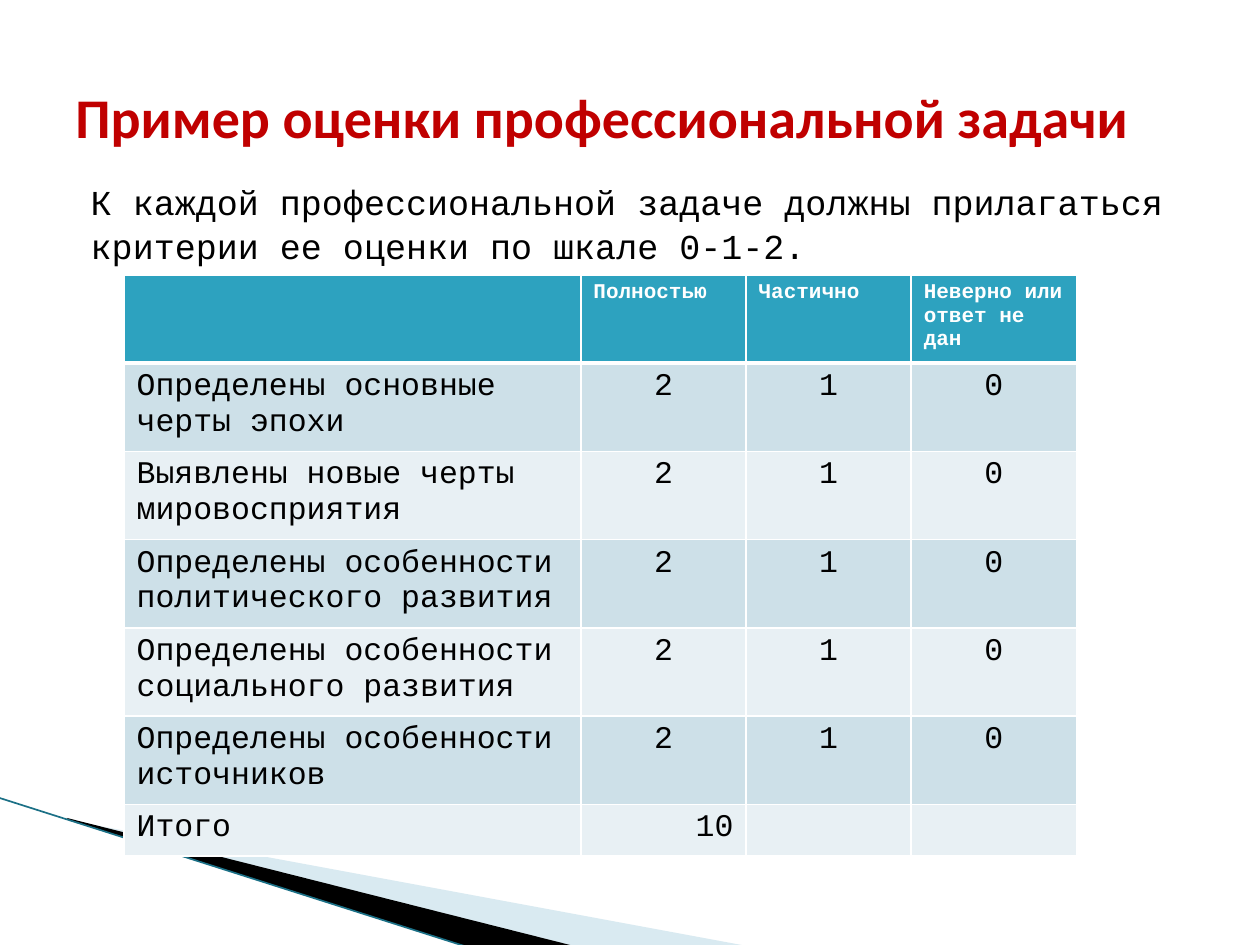
import pptx
import pptx.util
import pptx.dml.color
import pptx.enum.shapes
import pptx.enum.text
import pptx.oxml
import pptx.oxml.ns

Cm = pptx.util.Cm
Pt = pptx.util.Pt
ALIGN = pptx.enum.text.PP_ALIGN

COLORS = {
    "title": "C00000", "text": "000000", "white": "FFFFFF",
    "header": "2DA2BF", "odd": "CDE0E8", "even": "E8F0F4",
    "pale": "A0CBDC", "black": "000000", "edge": "1B7086",
}
TITLE = {"name": "Calibri", "size": Pt(32), "bold": True, "color": "title"}
BODY = {"name": "Courier New", "size": Pt(20), "bold": False, "color": "text"}
HEADER = {**BODY, "size": Pt(12), "bold": True, "color": "white"}
CELL = {**BODY, "size": Pt(18)}

HEADINGS = ["", "Полностью", "Частично", "Неверно или ответ не дан"]
CRITERIA = [
    "Определены основные черты эпохи",
    "Выявлены новые черты мировосприятия",
    "Определены особенности политического развития",
    "Определены особенности социального развития",
    "Определены особенности источников",
]
ROWS = [HEADINGS] + [[name, "2", "1", "0"] for name in CRITERIA] + [["Итого", "10", "", ""]]


def rgb(name):
    return pptx.dml.color.RGBColor.from_string(COLORS[name])


def write(para, text, style):
    span = para.add_run()
    span.text = text
    for key, value in style.items():
        if key == "color":
            span.font.color.rgb = rgb(value)
        else:
            setattr(span.font, key, value)


def add_text(page, left, top, width, height, text, style, frame_format, para_format):
    box = page.shapes.add_textbox(Cm(left), Cm(top), Cm(width), Cm(height))
    frame = box.text_frame
    for key, value in {"word_wrap": True, **frame_format}.items():
        setattr(frame, key, value)
    para = frame.paragraphs[0]
    for key, value in para_format.items():
        setattr(para, key, value)
    write(para, text, style)


def add_wedge(page, left, top, points, color, opacity=100):
    """Draw a filled outline; points are offsets in cm from left and top."""
    corners = [(Cm(left + x), Cm(top + y)) for x, y in points]
    builder = page.shapes.build_freeform(*corners[0])
    builder.add_line_segments(corners[1:], close=True)
    wedge = builder.convert_to_shape()
    wedge.shadow.inherit = False
    wedge.fill.solid()
    wedge.fill.fore_color.rgb = rgb(color)
    wedge.line.fill.background()
    if opacity < 100:
        tint = wedge.fill._xPr.find(".//" + pptx.oxml.ns.qn("a:srgbClr"))
        tint.append(pptx.oxml.parse_xml(
            f'<a:alpha {pptx.oxml.ns.nsdecls("a")} val="{opacity * 1000}"/>'))


def add_corner(page, left, top):
    """Draw the wedges and the edge line that start at the left side."""
    add_wedge(page, left + 1.4, top + 0.43,
              [(0, 0.03), (13.71, 2.57), (10.19, 2.57), (0, 0)], "pale", 40)
    add_wedge(page, left + 1.35, top + 0.41,
              [(0, 0), (10.26, 2.59), (8.1, 2.61), (0.03, 0.03)], "black")
    edge = page.shapes.add_connector(
        pptx.enum.shapes.MSO_CONNECTOR.STRAIGHT,
        Cm(left - 0.03), Cm(top), Cm(left + 9.45), Cm(top + 3.02))
    edge.line.color.rgb = rgb("edge")
    edge.line.width = Pt(0.95)
    edge._element.spPr.append(
        pptx.oxml.parse_xml(f'<a:effectLst {pptx.oxml.ns.nsdecls("a")}/>'))


def set_borders(cell, widths):
    for side, width in widths.items():
        cell._tc.get_or_add_tcPr().append(pptx.oxml.parse_xml(
            f'<a:ln{side} {pptx.oxml.ns.nsdecls("a")} w="{Pt(width)}"><a:solidFill>'
            f'<a:srgbClr val="{COLORS["white"]}"/></a:solidFill></a:ln{side}>'))


def cell_alignment(row, column, last):
    if row == 0 or column == 0:
        return ALIGN.LEFT
    return ALIGN.RIGHT if row == last else ALIGN.CENTER


def add_score_table(page, left, top, width, height):
    last = len(ROWS) - 1
    table = page.shapes.add_table(
        len(ROWS), len(HEADINGS), Cm(left), Cm(top), Cm(width), Cm(height)).table
    score_width = 3.33
    for index, column in enumerate(table.columns):
        column.width = Cm(score_width if index else width - 3 * score_width)
    header_height, last_height = 1.65, 1.04
    middle = (height - header_height - last_height) / len(CRITERIA)
    for row, size in zip(table.rows, [header_height] + [middle] * len(CRITERIA) + [last_height]):
        row.height = Cm(size)

    for r, texts in enumerate(ROWS):
        fill = "header" if r == 0 else ("odd" if r % 2 else "even")
        for c, text in enumerate(texts):
            cell = table.cell(r, c)
            set_borders(cell, {"L": 1, "R": 1, "T": 3 if r == 1 else 1, "B": 1 if r else 3})
            cell.fill.solid()
            cell.fill.fore_color.rgb = rgb(fill)
            para = cell.text_frame.paragraphs[0]
            para.alignment = cell_alignment(r, c, last)
            if text:
                write(para, text, CELL if r else HEADER)


def main():
    deck = pptx.Presentation()
    deck.slide_width, deck.slide_height = Cm(25.4), Cm(19.05)
    page = deck.slides.add_slide(deck.slide_layouts[6])
    add_corner(page, 0, 16.08)
    add_text(page, 1.27, 3.33, 22.86, 13.36,
             "К каждой профессиональной задаче должны прилагаться "
             "критерии ее оценки по шкале 0-1-2.", BODY,
             {"margin_left": Cm(0.56), "margin_top": Cm(0.27)}, {"line_spacing": 1.05})
    add_text(page, 1.27, 0.76, 22.86, 3.18, "Пример оценки профессиональной задачи", TITLE,
             {"vertical_anchor": pptx.enum.text.MSO_ANCHOR.MIDDLE}, {})
    add_score_table(page, 2.5, 5.54, 19.2, 11.16)
    deck.save("out.pptx")


if __name__ == "__main__":
    main()
